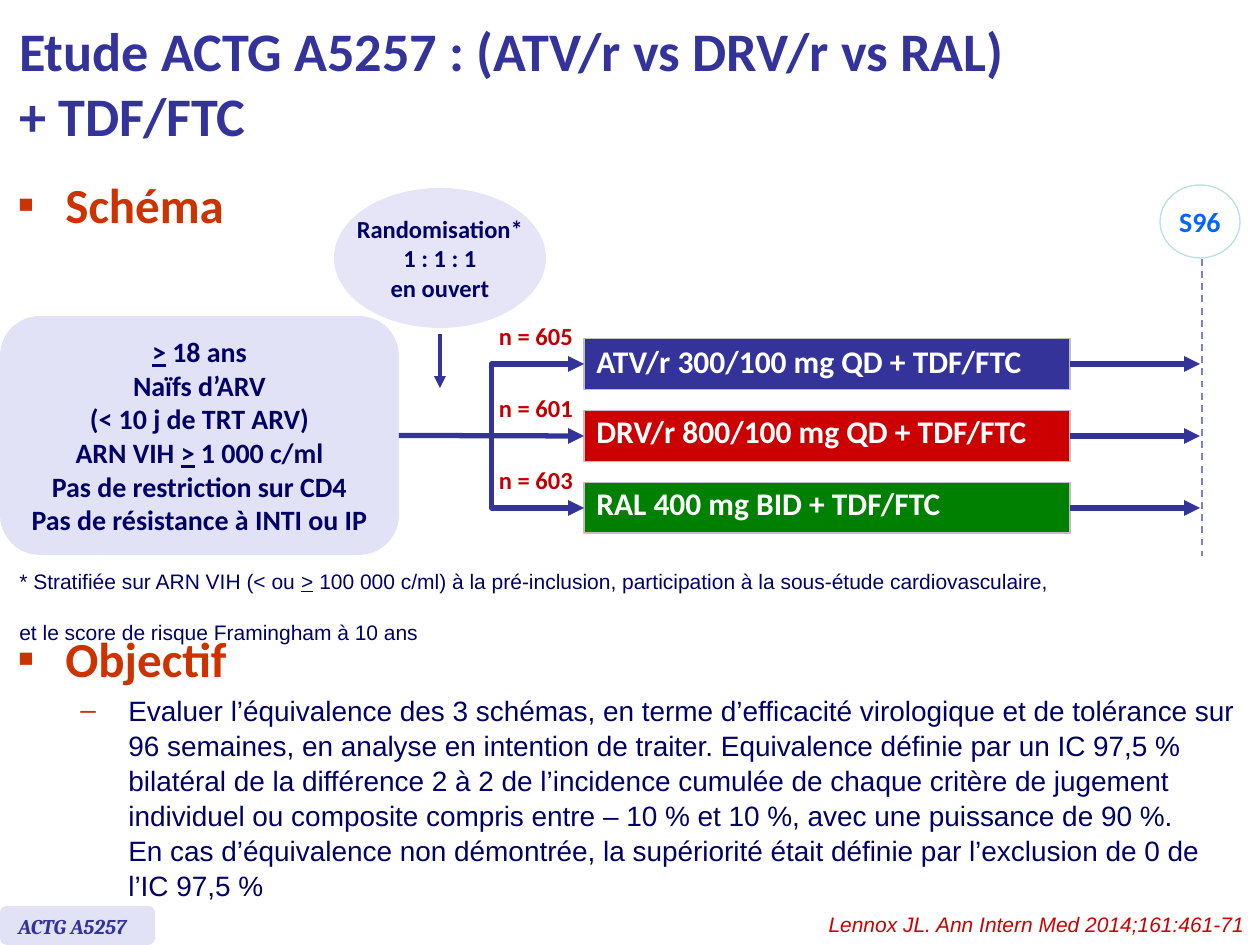
from lxml.etree import SubElement as Sub
from pptx import Presentation
from pptx.dml.color import RGBColor as RGB
from pptx.enum.dml import MSO_LINE as Dash
from pptx.enum.shapes import MSO_CONNECTOR as Con, MSO_SHAPE as Geo
from pptx.enum.text import MSO_ANCHOR as Anchor, PP_ALIGN as Align
from pptx.oxml.ns import qn
from pptx.util import Emu, Pt

PX = 914400 // 126
NAVY, BLUE, RED, RUST, PALE = "000066", "333399", "CC0000", "CC3300", "E2E2F6"

# A paragraph is a string; "_" switches underline, "\n" breaks the line.
TITLE = "Etude ACTG A5257 : (ATV/r vs DRV/r vs RAL)\n+ TDF/FTC"
GOAL = (
    "Evaluer l’équivalence des 3 schémas, en terme d’efficacité virologique et de "
    "tolérance sur 96 semaines, en analyse en intention de traiter. Equivalence "
    "définie par un IC 97,5 % bilatéral de la différence 2 à 2 de l’incidence cumulée "
    "de chaque critère de jugement individuel ou composite compris entre – 10 % et "
    "10 %, avec une puissance de 90 %.\nEn cas d’équivalence non démontrée, la "
    "supériorité était définie par l’exclusion de 0 de l’IC 97,5 %"
)
NOTE = [
    "* Stratifiée sur ARN VIH (< ou _>_ 100 000 c/ml) à la pré-inclusion, "
    "participation à la sous-étude cardiovasculaire,",
    "et le score de risque Framingham à 10 ans",
]
ENTRY = [
    "_>_ 18 ans",
    "Naïfs d’ARV\n(< 10 j de TRT ARV)",
    "ARN VIH _>_ 1 000 c/ml",
    "Pas de restriction sur CD4",
    "Pas de résistance à INTI ou IP",
]
DRAW = ["Randomisation*", "1 : 1 : 1", "en ouvert"]
ARMS = [  # label, size, fill, line spacing
    ("ATV/r 300/100 mg QD + TDF/FTC", "n = 605", BLUE, 0.8),
    ("DRV/r 800/100 mg QD + TDF/FTC", "n = 601", RED, 0.7),
    ("RAL 400 mg BID + TDF/FTC", "n = 603", "008000", 0.7),
]
MID, STEP, BAR = 364, 72, 51  # first arm's centre, pitch, bar height
END = 1200

deck = Presentation()
deck.slide_width, deck.slide_height = Emu(1260 * PX), Emu(945 * PX)
slide = deck.slides.add_slide(deck.slide_layouts[6])
shapes = slide.shapes


def px(*nums):
    return [Emu(round(n * PX)) for n in nums]


def hue(code):
    return RGB.from_string(code)


def style(para, size, color, face="Calibri", bold=True, italic=False):
    font = para.font
    font.size, font.name, font.bold, font.italic = Pt(size), face, bold, italic
    font.color.rgb = hue(color)


def fill_para(para, text):
    for i, line in enumerate(text.split("\n")):
        if i:
            para.add_line_break()
        for j, part in enumerate(line.split("_")):
            if part:
                run = para.add_run()
                run.text = part
                if j % 2:
                    run.font.underline = True


def write(shape, paras, *look, align=Align.LEFT, anchor=Anchor.TOP, wrap=True):
    """Put paragraphs of one look into a shape and return them."""
    frame = shape.text_frame
    frame.word_wrap, frame.vertical_anchor = wrap, anchor
    for i, text in enumerate(paras):
        para = frame.add_paragraph() if i else frame.paragraphs[0]
        fill_para(para, text)
        para.alignment = align
        style(para, *look)
    return frame.paragraphs


def text_box(box, paras, *look, **opts):
    return write(shapes.add_textbox(*px(*box)), paras, *look, **opts)


def block(geo, box, fill, edge=None, width=1):
    shape = shapes.add_shape(geo, *px(*box))
    shape.shadow.inherit = False
    shape.fill.solid()
    shape.fill.fore_color.rgb = hue(fill)
    if edge:
        shape.line.color.rgb = hue(edge)
        shape.line.width = Pt(width)
    else:
        shape.line.fill.background()
    return shape


def link(ends, kind=Con.STRAIGHT, color=BLUE, width=3, head=True):
    line = shapes.add_connector(kind, *px(*ends))
    line.line.color.rgb = hue(color)
    line.line.width = Pt(width)
    if head:
        Sub(line.line._get_or_add_ln(), qn("a:tailEnd"), type="triangle")
    Sub(line._element.spPr, qn("a:effectLst"))
    return line


def bullet(para, mark, left):
    prop = para._p.get_or_add_pPr()
    prop.set("marL", str(left * PX))
    prop.set("indent", str(-48 * PX))
    Sub(Sub(prop, qn("a:buClr")), qn("a:srgbClr"), val=RUST)
    Sub(prop, qn("a:buFont"), typeface="Arial")
    Sub(prop, qn("a:buChar"), char=mark)


def section(box, head, body=None):
    frame = shapes.add_textbox(*px(*box)).text_frame
    frame.word_wrap = True
    para = frame.paragraphs[0]
    bullet(para, "▪", 48)
    fill_para(para, head)
    style(para, 28, RUST)
    if body:
        para = frame.add_paragraph()
        para.level = 1
        bullet(para, "–", 111)
        fill_para(para, body)
        para.space_before, para.line_spacing = Pt(3), 1.04
        style(para, 16, NAVY, "Arial", False)


# Title, sections and footer
text_box((7, 6, 1253, 153), [TITLE], 31, BLUE, anchor=Anchor.MIDDLE)
section((5, 168, 250, 79), "Schéma")
section((5, 622, 1251, 248), "Objectif", GOAL)
note = text_box((7, 562, 1060, 64), NOTE, 12, NAVY, "Arial", False)
note[1].space_before = Pt(15)
text_box((741, 905, 516, 38), ["Lennox JL. Ann Intern Med 2014;161:461-71"],
         12, RED, "Arial", False, True, align=Align.RIGHT)
block(Geo.ROUNDED_RECTANGLE, (0, 906, 155, 39), PALE)
text_box((6, 907, 144, 38), ["ACTG A5257"], 12, BLUE, "Cambria", True, True)

# Trial scheme
center = dict(align=Align.CENTER, anchor=Anchor.MIDDLE)
entry = block(Geo.ROUNDED_RECTANGLE, (0, 316, 399, 239), PALE)
write(entry, ENTRY, 16, NAVY, **center)
draw = block(Geo.OVAL, (334, 188, 212, 140), "E5E5F7")
write(draw, DRAW, 14, NAVY, wrap=False, **center)
link((440, 334, 440, 388), width=2.25)
week = block(Geo.OVAL, (1160, 185, 80, 73), "FFFFFF", "BBE0E3", 0.75)
write(week, ["S96"], 16, "0066FF", wrap=False, **center)
stop = link((1202, 259, 1202, 556), color="7E7ED4", width=1, head=False)
stop.line.dash_style = Dash.DASH

for i, (name, count, fill, gap) in enumerate(ARMS):
    y = MID + i * STEP
    text_box((486, y - 49, 100, 43), [count], 14, "C00000",
             align=Align.CENTER, wrap=False)
    bar = block(Geo.RECTANGLE, (584, y - BAR / 2, 486, BAR), fill, "C0C0C0")
    write(bar, [name], 18, "FFFFFF", anchor=Anchor.MIDDLE)[0].line_spacing = gap
    kind = Con.STRAIGHT if i == 1 else Con.ELBOW
    way = link((399, MID + STEP, 584, y), kind)
    way.begin_connect(entry, 3)
    way.end_connect(bar, 1)
    link((1070, y, END, y)).begin_connect(bar, 3)

deck.save("out.pptx")
